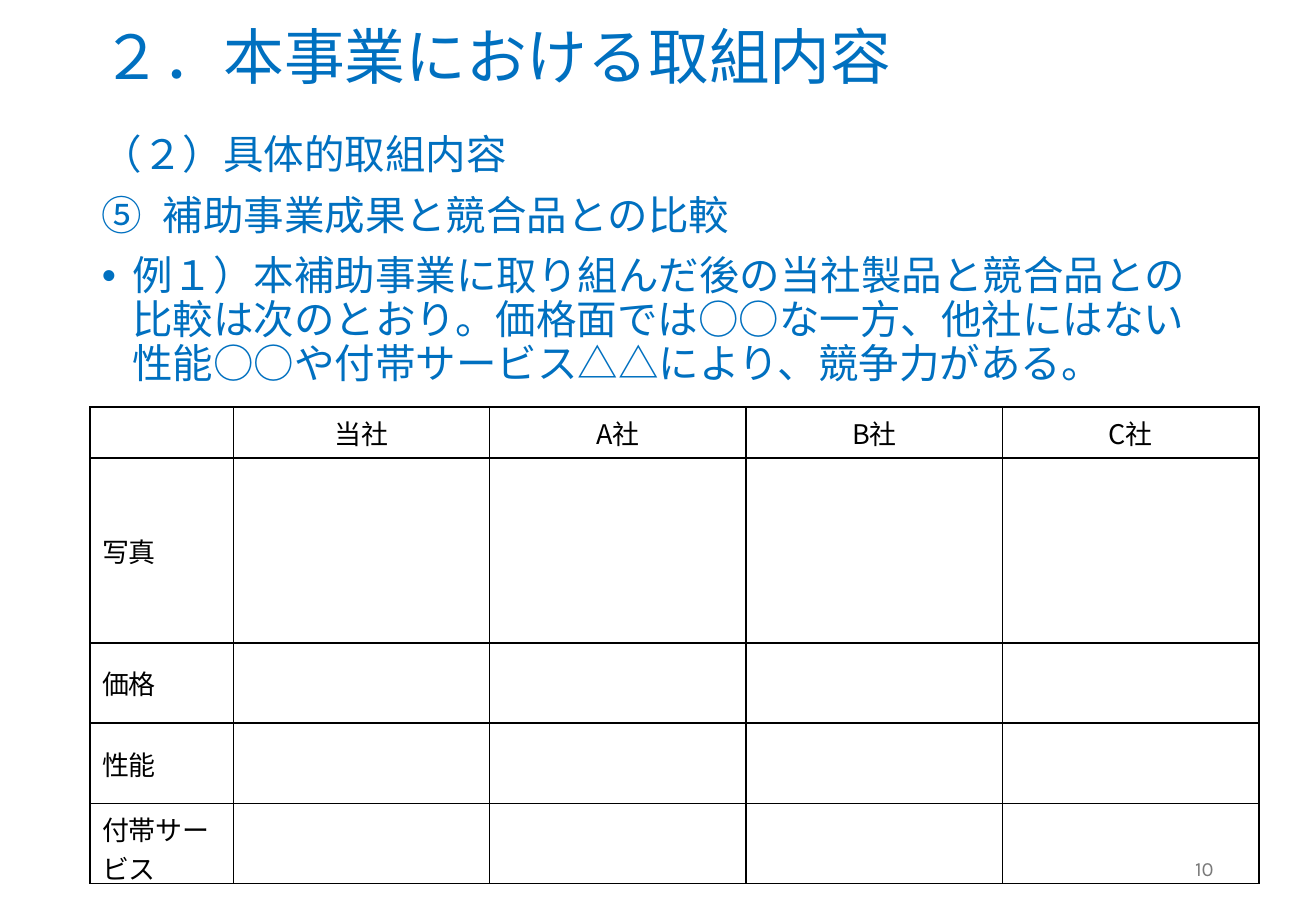
from lxml import etree
from pptx import Presentation
from pptx import util as u
from pptx.dml.color import RGBColor
from pptx.enum import text
from pptx.oxml import ns

COLORS = {"heading": "0070C0", "table": "000000", "number": "797979", "paper": "FFFFFF"}
JAPANESE = "Noto Sans CJK JP"
COMPANIES = ["当社", "A社", "B社", "C社"]
CRITERIA = ["写真", "価格", "性能", "付帯サービス"]
COLUMN_WIDTHS = [85] + [152] * len(COMPANIES)
ROW_HEIGHTS = [30.4, 109.5] + [47.6] * 3


def add_span(para, words, size, color, font=JAPANESE):
    """Add one run with its size, colour and typeface."""
    span = para.add_run()
    span.text = words
    span.font.size = u.Pt(size)
    span.font.color.rgb = RGBColor.from_string(COLORS[color])
    span.font.name = font
    etree.SubElement(span.font._element, ns.qn("a:ea"), typeface=font)


def add_box(page, left, top, width, height, anchor):
    """Add a wrapping text box and return its text frame."""
    box = page.shapes.add_textbox(u.Pt(left), u.Pt(top), u.Pt(width), u.Pt(height))
    frame = box.text_frame
    frame.word_wrap = True
    frame.vertical_anchor = anchor
    return frame


def set_bullet(para, indent, tag, **attributes):
    """Give a paragraph a hanging indent and a bullet or number."""
    props = para._p.get_or_add_pPr()
    props.set("marL", str(u.Pt(indent)))
    props.set("indent", str(-u.Pt(indent)))
    etree.SubElement(props, ns.qn("a:buFont"), typeface="Arial")
    etree.SubElement(props, ns.qn(tag), **attributes)


def add_title(page):
    """Add the slide title."""
    para = add_box(page, 53.3, 7.9, 672.5, 55.4, text.MSO_ANCHOR.MIDDLE).paragraphs[0]
    para.line_spacing = 0.9
    add_span(para, "２．本事業における取組内容", 36, "heading")


def add_body(page):
    """Add the subheading, the numbered line and the bulleted example."""
    frame = add_box(page, 53.3, 76.3, 672.5, 410.4, text.MSO_ANCHOR.TOP)
    subheading, numbered, example = frame.paragraphs[0], frame.add_paragraph(), frame.add_paragraph()
    set_bullet(numbered, 36, "a:buAutoNum", type="circleNumDbPlain", startAt="5")
    set_bullet(example, 18, "a:buChar", char="•")
    numbered.space_before = example.space_before = u.Pt(10)
    lines = {
        "（２）具体的取組内容": subheading,
        "補助事業成果と競合品との比較": numbered,
        "例１）本補助事業に取り組んだ後の当社製品と競合品との比較は次のとおり。"
        "価格面では○○な一方、他社にはない性能○○や付帯サービス△△により、競争力がある。": example,
    }
    for words, para in lines.items():
        para.line_spacing = 0.9
        add_span(para, words, 24, "heading")


def style_cell(cell):
    """Fill a cell and draw its four borders."""
    cell.fill.solid()
    cell.fill.fore_color.rgb = RGBColor.from_string(COLORS["paper"])
    props = cell._tc.get_or_add_tcPr()
    for position, side in enumerate(("lnL", "lnR", "lnT", "lnB")):
        line = etree.Element(ns.qn(f"a:{side}"), w=str(u.Pt(1)))
        fill = etree.SubElement(line, ns.qn("a:solidFill"))
        etree.SubElement(fill, ns.qn("a:srgbClr"), val=COLORS["table"])
        props.insert(position, line)


def add_comparison(page):
    """Add the table that compares the companies."""
    table = page.shapes.add_table(
        len(ROW_HEIGHTS), len(COLUMN_WIDTHS), u.Pt(53.3), u.Pt(241.2),
        u.Pt(sum(COLUMN_WIDTHS)), u.Pt(sum(ROW_HEIGHTS))).table
    table.first_row = table.horz_banding = False
    for column, width in zip(table.columns, COLUMN_WIDTHS):
        column.width = u.Pt(width)
    for row, height in zip(table.rows, ROW_HEIGHTS):
        row.height = u.Pt(height)
    for cell in table.iter_cells():
        style_cell(cell)
    for index, company in enumerate(COMPANIES, 1):
        para = table.cell(0, index).text_frame.paragraphs[0]
        para.alignment = text.PP_ALIGN.CENTER
        add_span(para, company, 16, "table")
    for index, criterion in enumerate(CRITERIA, 1):
        cell = table.cell(index, 0)
        cell.vertical_anchor = text.MSO_ANCHOR.MIDDLE
        add_span(cell.text_frame.paragraphs[0], criterion, 16, "table")


def add_page_number(page):
    """Add the page number at the lower right."""
    para = add_box(page, 550.8, 500.4, 175.7, 28.8, text.MSO_ANCHOR.MIDDLE).paragraphs[0]
    para.alignment = text.PP_ALIGN.RIGHT
    add_span(para, "10", 12, "number", "Karla")


def main():
    """Build and save the slide."""
    deck = Presentation()
    deck.slide_width, deck.slide_height = u.Pt(780), u.Pt(540)
    page = deck.slides.add_slide(deck.slide_layouts[6])
    add_title(page)
    add_body(page)
    add_comparison(page)
    add_page_number(page)
    deck.save("out.pptx")


if __name__ == "__main__":
    main()
